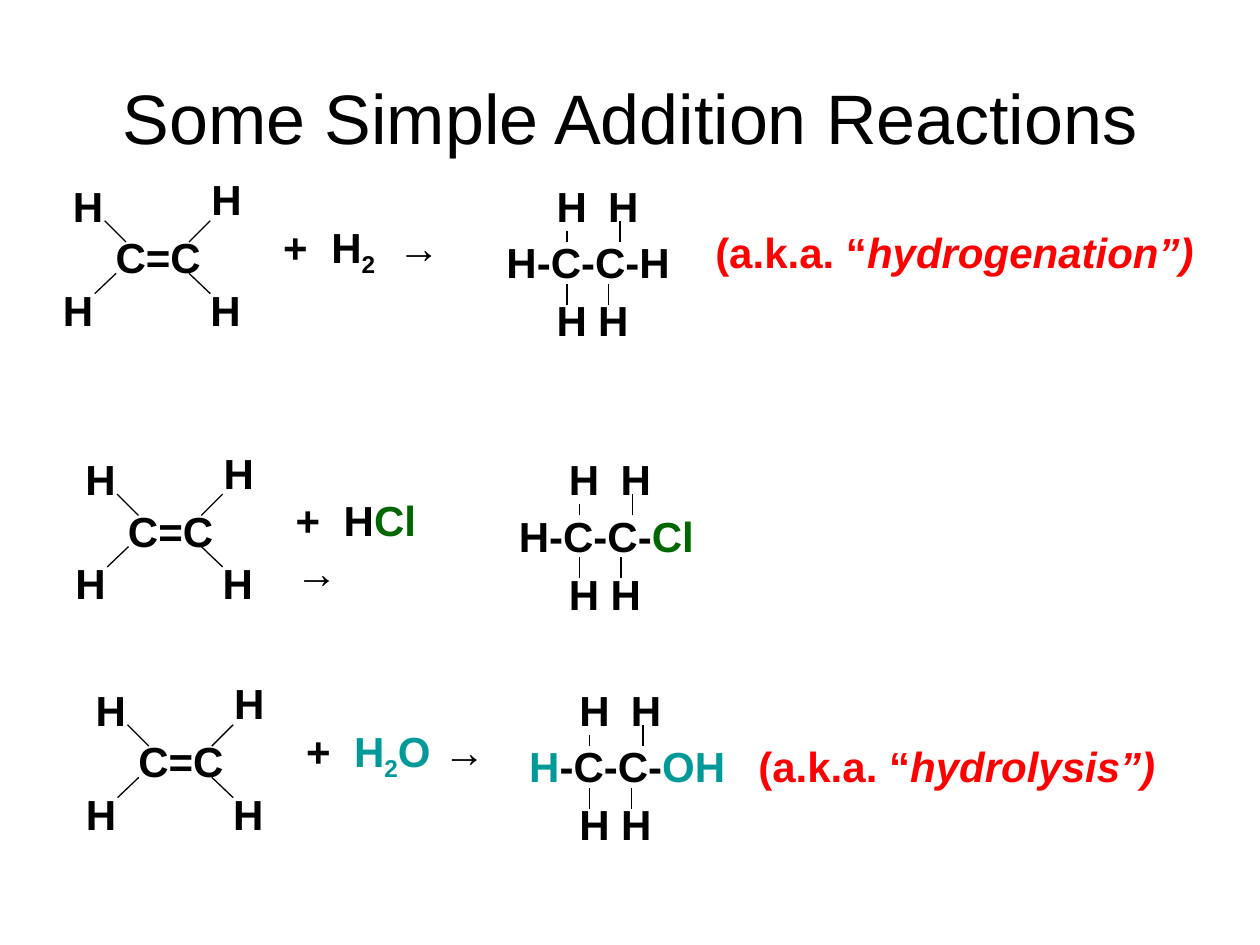
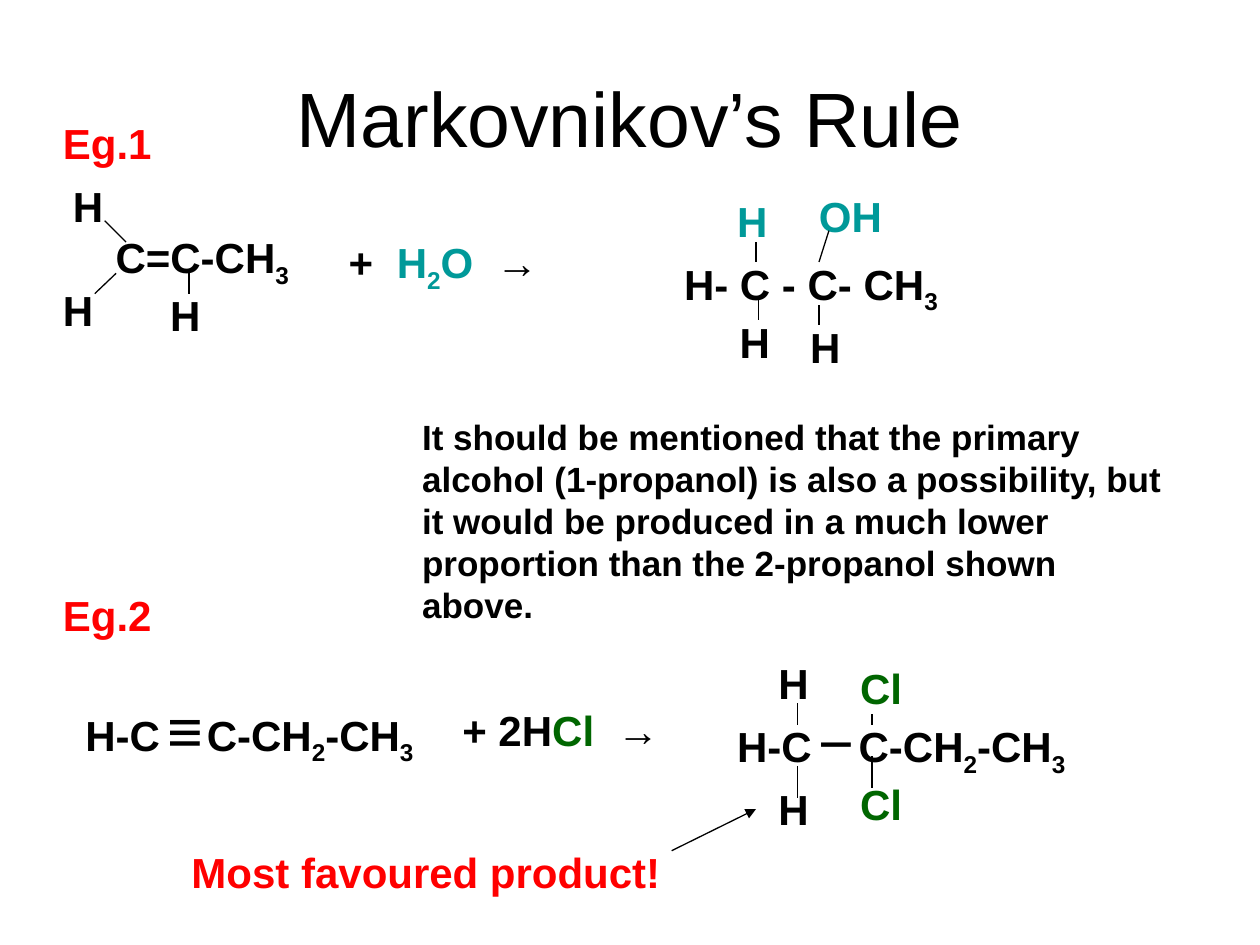
from dataclasses import dataclass
from typing import NamedTuple

from lxml.etree import SubElement
from pptx import Presentation
from pptx.dml.color import RGBColor as Color
from pptx.enum.shapes import MSO_CONNECTOR as Connector
from pptx.enum.text import MSO_ANCHOR as Anchor
from pptx.enum.text import MSO_AUTO_SIZE as AutoSize
from pptx.enum.text import PP_ALIGN as Align
from pptx.oxml.ns import qn
from pptx.slide import Slide
from pptx.util import Cm, Pt


@dataclass(frozen=True)
class Theme:
    font: str = "Arial"
    ink: str = "000000"
    accent: str = "FF0000"
    chlorine: str = "006600"
    water: str = "009999"
    title: int = 40
    large_title: int = 44
    formula: int = 24
    note: int = 20
    bond_glyph: int = 35
    bond_line: float = 0.75


THEME = Theme()


class Run(NamedTuple):
    text: str
    color: str = THEME.ink
    subscript: bool = False
    italic: bool = False


@dataclass(frozen=True)
class Label:
    x: float
    y: float
    runs: tuple[Run, ...]
    width: float
    height: float = 1.27
    size: int = THEME.formula
    bold: bool = True
    wrap: bool = False
    inset: bool = True


class Bond(NamedTuple):
    x1: float
    y1: float
    x2: float
    y2: float
    arrow: bool = False


class Reaction(NamedTuple):
    dx: float
    dy: float
    reagent: tuple[Run, ...]
    reagent_width: float
    arrow_x: float
    arrow_y: float
    product: tuple[Run, ...]
    product_width: float


def hydrogen(x: float, y: float, color: str = THEME.ink) -> Label:
    return Label(x, y, (Run("H", color),), 1.12)


def plus(x: float, y: float) -> Label:
    return Label(x, y, (Run("+"),), 1.0)


def yields(x: float, y: float) -> Label:
    return Label(x, y, (Run("→"),), 1.35)


def chlorine(x: float, y: float) -> Label:
    return Label(x, y, (Run("Cl", THEME.chlorine),), 1.35)


def heading(text: str, y: float) -> Label:
    return Label(1.02, y, (Run(text, THEME.accent),), 2.29)


def alias(name: str, x: float, y: float, width: float) -> Label:
    runs = (Run("(a.k.a. “", THEME.accent), Run(f"{name}”)", THEME.accent, italic=True))
    return Label(x, y, runs, width, wrap=True)


def carbon_chain(x: float, y: float, bond: str) -> tuple[Label, ...]:
    tail = (Run("C-CH"), Run("2", subscript=True), Run("-CH"), Run("3", subscript=True))
    return (
        Label(x, y, (Run("H-C"),), 2.01),
        Label(x + 2.45, y, tail, 4.77),
        Label(x + 1.9, y - 0.21, (Run(bond),), 0.69, 1.47,
              THEME.bond_glyph, bold=False, inset=False),
    )


WATER = (Run("H", THEME.water), Run("2", THEME.water, subscript=True), Run("O", THEME.water))
WATER_WIDTH = 2.09
PLUS_STEP = 0.97

ALKENE_LEFT_HYDROGENS = (hydrogen(1.22, 3.51), hydrogen(1.02, 5.61))
ALKENE_LEFT_BONDS = (Bond(1.91, 5.92, 2.34, 5.51), Bond(2.11, 4.45, 2.54, 4.88))

ETHENE_LABELS = (
    Label(2.08, 4.55, (Run("C=C"),), 2.24),
    *ALKENE_LEFT_HYDROGENS,
    hydrogen(4.01, 3.38),
    hydrogen(3.99, 5.61),
)
ETHENE_BONDS = (
    *ALKENE_LEFT_BONDS,
    Bond(3.81, 5.51, 4.24, 5.92),
    Bond(3.81, 4.88, 4.24, 4.45),
)
ETHANE_HYDROGENS = (
    hydrogen(10.97, 3.51),
    hydrogen(12.01, 3.51),
    hydrogen(10.97, 5.82),
    hydrogen(11.81, 5.82),
)
ETHANE_BONDS = (
    Bond(11.43, 4.88, 11.43, 4.65),
    Bond(11.43, 5.72, 11.43, 6.15),
    Bond(12.27, 5.72, 12.27, 6.15),
    Bond(12.5, 4.88, 12.5, 4.45),
)

REACTIONS = (
    Reaction(0, 0, (Run("H"), Run("2", subscript=True)), 1.43, 7.77, 4.34,
             (Run("H-C-C-H"),), 3.81),
    Reaction(0.25, 5.51, (Run("H"), Run("Cl", THEME.chlorine)), 1.97, 5.46, 5.38,
             (Run("H-C-C-"), Run("Cl", THEME.chlorine)), 4.04),
    Reaction(0.46, 10.16, WATER, WATER_WIDTH, 8.23, 4.34,
             (Run("H", THEME.water), Run("-C-C-"), Run("OH", THEME.water)), 4.47),
)

NOTE = (
    "It should be mentioned that the primary alcohol (1-propanol) is also a possibility, "
    "but it would be produced in a much lower proportion than the 2-propanol shown above."
)

MARKOVNIKOV_LABELS = (
    heading("Eg.1", 2.24),
    Label(2.08, 4.55, (Run("C=C-CH"), Run("3", subscript=True)), 4.06),
    *ALKENE_LEFT_HYDROGENS,
    hydrogen(3.18, 5.72),
    plus(6.78, 4.65),
    Label(6.78 + PLUS_STEP, 4.65, WATER, WATER_WIDTH),
    yields(9.75, 4.65),
    Label(13.54, 5.08, (Run("H- C - C- CH"), Run("3", subscript=True)), 5.66),
    hydrogen(14.61, 3.81, THEME.water),
    hydrogen(16.08, 6.35),
    hydrogen(14.66, 6.25),
    Label(16.26, 3.71, (Run("OH", THEME.water),), 1.78),
    Label(8.26, 8.26, (Run(NOTE),), 15.44, 4.5, THEME.note, wrap=True),
    heading("Eg.2", 11.76),
    *carbon_chain(1.47, 14.17, "≡"),
    Label(9.07, 14.07, (Run("+ 2H"), Run("Cl", THEME.chlorine)), 3.17),
    yields(12.19, 14.07),
    *carbon_chain(14.61, 14.4, "−"),
    chlorine(17.09, 13.23),
    chlorine(17.09, 15.57),
    hydrogen(15.44, 13.13),
    hydrogen(15.44, 15.67),
    Label(3.61, 16.94, (Run("Most favoured product!", THEME.accent),), 9.96),
)
MARKOVNIKOV_BONDS = (
    *ALKENE_LEFT_BONDS,
    Bond(3.81, 5.51, 3.81, 5.92),
    Bond(15.29, 6.02, 15.29, 6.45),
    Bond(15.24, 5.28, 15.24, 4.88),
    Bond(16.51, 6.55, 16.51, 6.15),
    Bond(16.51, 5.28, 16.71, 4.65),
    Bond(17.58, 14.61, 17.58, 14.4),
    Bond(17.58, 15.24, 17.58, 15.88),
    Bond(16.08, 14.61, 16.08, 14.17),
    Bond(16.08, 15.44, 16.08, 16.08),
    Bond(13.54, 17.15, 15.24, 16.31, arrow=True),
)


def draw_label(slide: Slide, label: Label, dx: float = 0, dy: float = 0,
               centred: bool = False) -> None:
    shape = slide.shapes.add_textbox(
        Cm(label.x + dx), Cm(label.y + dy), Cm(label.width), Cm(label.height))
    frame = shape.text_frame
    frame.word_wrap = label.wrap
    frame.auto_size = AutoSize.NONE if centred else AutoSize.SHAPE_TO_FIT_TEXT
    frame.vertical_anchor = Anchor.MIDDLE if centred else Anchor.TOP
    if not label.inset:
        frame.margin_left = frame.margin_right = frame.margin_top = frame.margin_bottom = 0
    paragraph = frame.paragraphs[0]
    paragraph.alignment = Align.CENTER if centred else Align.LEFT
    for item in label.runs:
        run = paragraph.add_run()
        run.text = item.text
        run.font.name = THEME.font
        run.font.size = Pt(label.size)
        run.font.bold = label.bold
        run.font.italic = item.italic
        run.font.color.rgb = Color.from_string(item.color)
        if item.subscript:
            run.font._element.set("baseline", "-25000")


def draw_bond(slide: Slide, bond: Bond, dx: float = 0, dy: float = 0) -> None:
    connector = slide.shapes.add_connector(
        Connector.STRAIGHT, Cm(bond.x1 + dx), Cm(bond.y1 + dy),
        Cm(bond.x2 + dx), Cm(bond.y2 + dy))
    connector.line.color.rgb = Color.from_string(THEME.ink)
    connector.line.width = Pt(THEME.bond_line)
    if bond.arrow:
        SubElement(connector.line._get_or_add_ln(), qn("a:tailEnd"), type="triangle")
    SubElement(connector._element.spPr, qn("a:effectLst"))


def draw_all(slide: Slide, labels: tuple[Label, ...], bonds: tuple[Bond, ...],
             dx: float = 0, dy: float = 0) -> None:
    for label in labels:
        draw_label(slide, label, dx, dy)
    for bond in bonds:
        draw_bond(slide, bond, dx, dy)


def draw_title(slide: Slide, text: str, size: int) -> None:
    title = Label(1.27, 0.76, (Run(text),), 22.86, 3.18, size, bold=False, wrap=True)
    draw_label(slide, title, centred=True)


def draw_reaction(slide: Slide, reaction: Reaction) -> None:
    labels = (
        *ETHENE_LABELS,
        plus(5.46, 4.34),
        Label(5.46 + PLUS_STEP, 4.34, reaction.reagent, reaction.reagent_width),
        yields(reaction.arrow_x, reaction.arrow_y),
        Label(9.96, 4.65, reaction.product, reaction.product_width),
        *ETHANE_HYDROGENS,
    )
    draw_all(slide, labels, ETHENE_BONDS + ETHANE_BONDS, reaction.dx, reaction.dy)


def main() -> None:
    presentation = Presentation()
    presentation.slide_width = Cm(25.4)
    presentation.slide_height = Cm(19.05)
    blank = presentation.slide_layouts[6]

    additions = presentation.slides.add_slide(blank)
    draw_title(additions, "Some Simple Addition Reactions", THEME.title)
    for reaction in REACTIONS:
        draw_reaction(additions, reaction)
    draw_label(additions, alias("hydrogenation", 14.17, 4.45, 10.59))
    draw_label(additions, alias("hydrolysis", 15.04, 14.81, 9.53))

    markovnikov = presentation.slides.add_slide(blank)
    draw_title(markovnikov, "Markovnikov’s Rule", THEME.large_title)
    draw_all(markovnikov, MARKOVNIKOV_LABELS, MARKOVNIKOV_BONDS)

    presentation.save("out.pptx")


if __name__ == "__main__":
    main()
